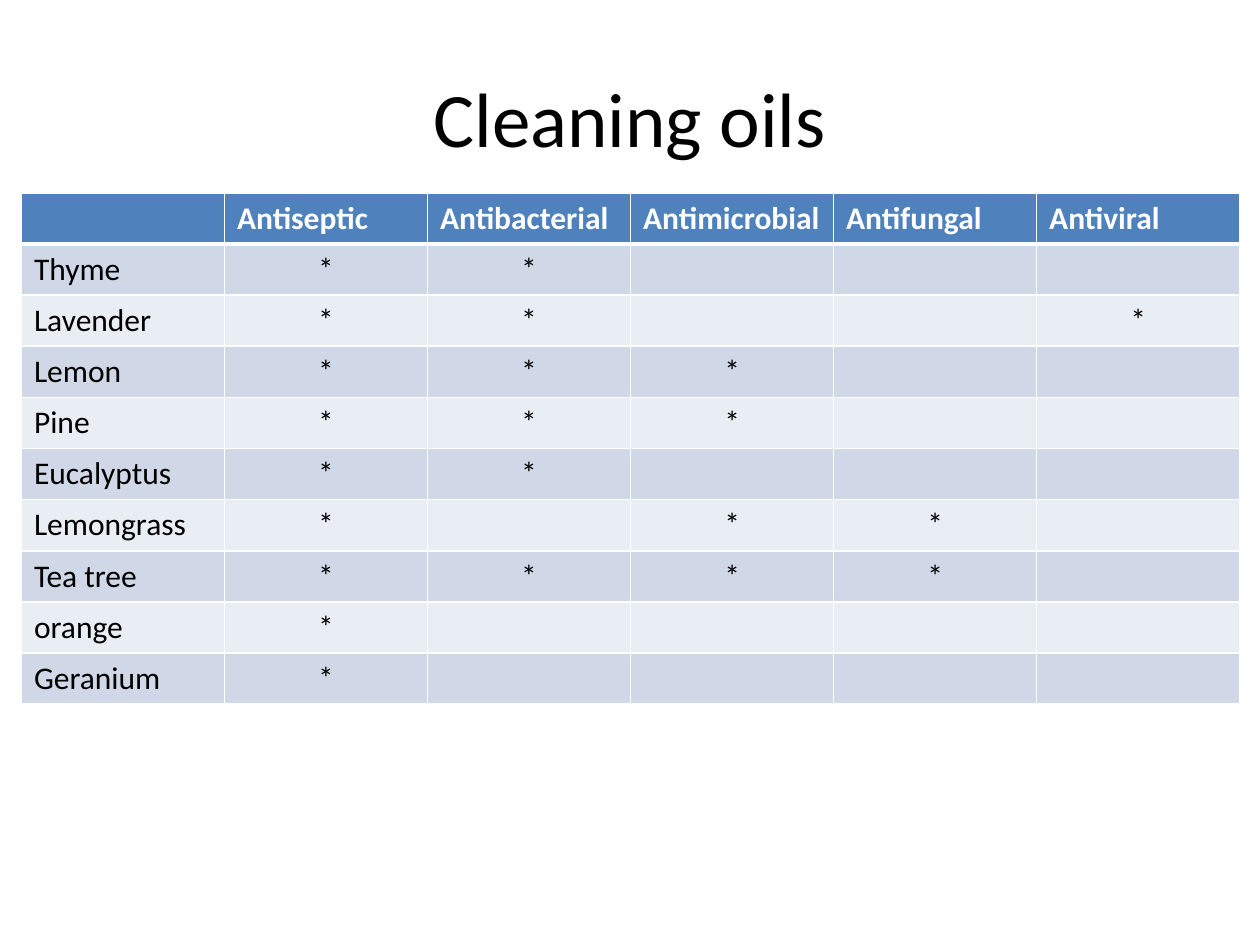
from dataclasses import dataclass

from pptx import Presentation
from pptx import util as u
from pptx.dml.color import RGBColor
from pptx.enum import text
from pptx.oxml import parse_xml
from pptx.oxml.ns import nsdecls


@dataclass(frozen=True)
class Theme:
    font: str = "Calibri"
    ink: str = "000000"
    paper: str = "FFFFFF"
    header: str = "4F81BD"
    bands: tuple = ("D0D8E8", "E9EDF4")
    title_size: int = 44
    table_size: int = 18
    rule: int = 1
    header_rule: int = 3


PROPERTIES = ["Antiseptic", "Antibacterial", "Antimicrobial", "Antifungal", "Antiviral"]
OILS = {
    "Thyme": PROPERTIES[:2],
    "Lavender": ["Antiseptic", "Antibacterial", "Antiviral"],
    "Lemon": PROPERTIES[:3],
    "Pine": PROPERTIES[:3],
    "Eucalyptus": PROPERTIES[:2],
    "Lemongrass": ["Antiseptic", "Antimicrobial", "Antifungal"],
    "Tea tree": PROPERTIES[:4],
    "orange": PROPERTIES[:1],
    "Geranium": PROPERTIES[:1],
}


class SlideBuilder:
    def __init__(self, slide, theme):
        self.slide = slide
        self.theme = theme

    def label(self, frame, words, size, color, align, bold=False):
        para = frame.paragraphs[0]
        para.alignment = align
        style = {"name": self.theme.font, "size": u.Pt(size), "bold": bold}
        font = para.font
        if words:
            span = para.add_run()
            span.text = words
            font = span.font
        for name, value in style.items():
            setattr(font, name, value)
        font.color.rgb = RGBColor.from_string(color)

    def title(self, words, left, top, width, height):
        box = self.slide.shapes.add_textbox(*map(u.Inches, (left, top, width, height)))
        frame = box.text_frame
        layout = {"word_wrap": True, "vertical_anchor": text.MSO_ANCHOR.MIDDLE}
        for name, value in layout.items():
            setattr(frame, name, value)
        self.label(frame, words, self.theme.title_size, self.theme.ink, text.PP_ALIGN.CENTER)

    def border(self, cell, side, points):
        cell._tc.get_or_add_tcPr().append(parse_xml(
            f'<a:ln{side} {nsdecls("a")} w="{u.Pt(points)}"><a:solidFill>'
            f'<a:srgbClr val="{self.theme.paper}"/></a:solidFill></a:ln{side}>'))

    def cell(self, cell, words, row, column):
        theme = self.theme
        is_header = row == 0
        widths = dict.fromkeys("LRTB", theme.rule)
        if row < 2:
            widths["B" if is_header else "T"] = theme.header_rule
        for side, points in widths.items():
            self.border(cell, side, points)
        cell.fill.solid()
        fill = theme.header if is_header else theme.bands[(row - 1) % 2]
        cell.fill.fore_color.rgb = RGBColor.from_string(fill)
        centred = not is_header and column > 0
        self.label(cell.text_frame, words, theme.table_size,
                   theme.paper if is_header else theme.ink,
                   text.PP_ALIGN.CENTER if centred else text.PP_ALIGN.LEFT, is_header)

    def table(self, rows, left, top, width, height):
        bounds = map(u.Inches, (left, top, width, height))
        table = self.slide.shapes.add_table(len(rows), len(rows[0]), *bounds).table
        for row, values in enumerate(rows):
            for column, words in enumerate(values):
                self.cell(table.cell(row, column), words, row, column)


def main():
    deck = Presentation()
    deck.slide_width, deck.slide_height = u.Inches(10), u.Inches(7.5)
    page = SlideBuilder(deck.slides.add_slide(deck.slide_layouts[6]), Theme())
    page.title("Cleaning oils", 0.5, 0.3, 9, 1.25)
    marks = [[oil, *("*" if name in uses else "" for name in PROPERTIES)]
             for oil, uses in OILS.items()]
    page.table([["", *PROPERTIES], *marks], 0.17, 1.53, 9.67, 4.06)
    deck.save("out.pptx")


if __name__ == "__main__":
    main()
